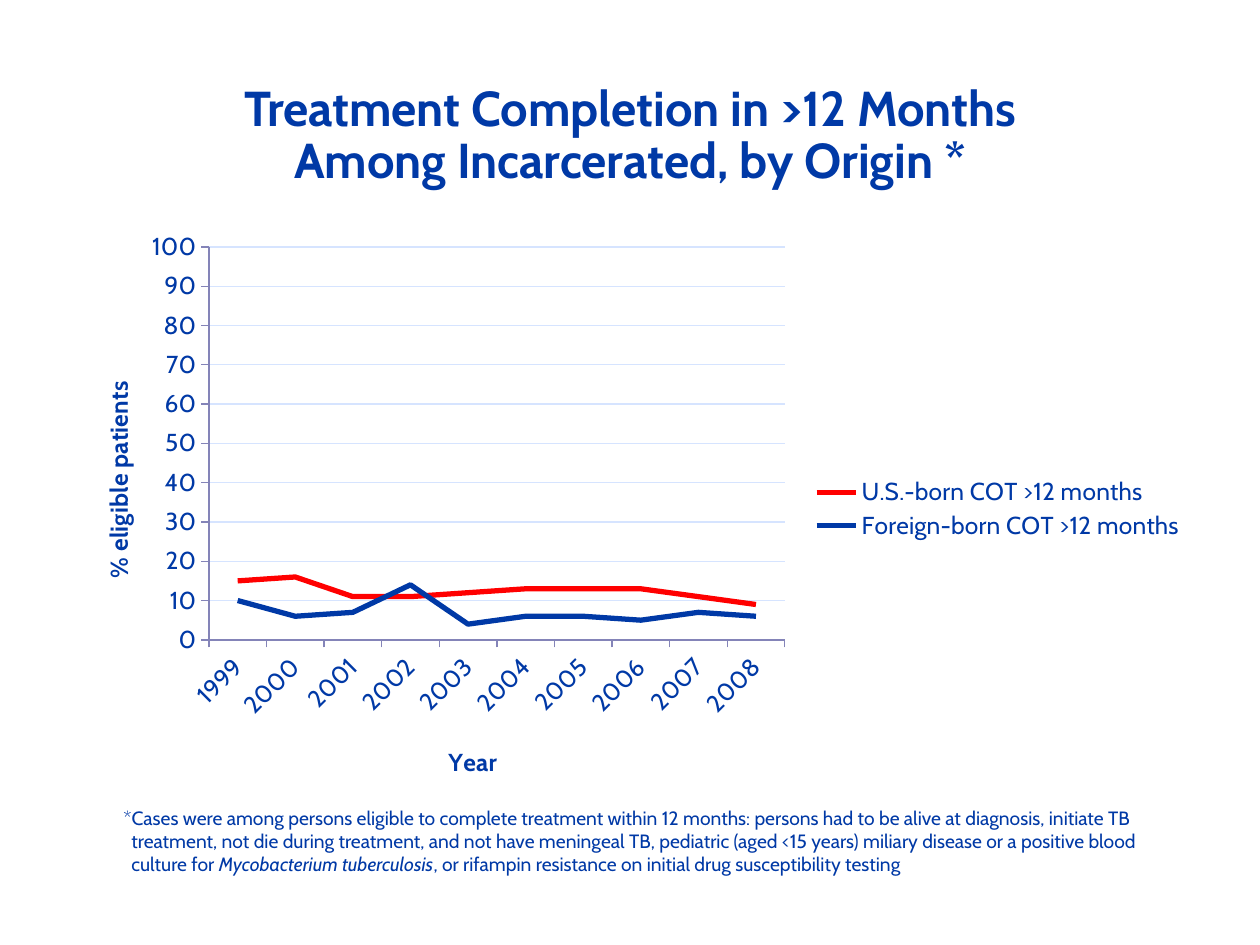
"""Build a slide with a line chart of late treatment completion by origin."""
from pptx import Presentation
from pptx import util as u
from pptx.chart.data import CategoryChartData
from pptx.dml.color import RGBColor
from pptx.enum import chart as ch, text
from pptx.oxml import parse_xml
from pptx.oxml.ns import nsdecls, qn

FONT, NAVY, RED, GRID, AXIS = "Cabin", "0039A6", "FF0000", "D6E4FF", "8484B8"
TITLE = "Treatment Completion in >12 Months\vAmong Incarcerated, by Origin *"
NOTE = [
    ("*Cases were among persons eligible to complete treatment within 12 months: "
     "persons had to be alive at diagnosis, initiate TB\v"
     "treatment, not die during treatment, and not have meningeal TB, pediatric "
     "(aged <15 years) miliary disease or a positive blood\vculture for ", False),
    ("Mycobacterium tuberculosis", True),
    (", or rifampin resistance on initial drug susceptibility testing", False),
]
YEARS = [str(year) for year in range(1999, 2009)]
SERIES = [
    ("U.S.-born COT >12 months", RED, (15, 16, 11, 11, 12, 13, 13, 13, 11, 9)),
    ("Foreign-born COT >12 months", NAVY, (10, 6, 7, 14, 4, 6, 6, 5, 7, 6)),
]
TITLE_BOX = (63, 38, 1134, 157)
CHART_BOX = (63, 220, 1134, 577)
NOTE_BOX = (63, 798, 1134, 84)
PLOT_BOX = (209, 247, 576, 393)
LEGEND_BOX = (812, 474, 372, 70)
YEAR_AT, PERCENT_AT = (444, 741), (97, 377)


def px(value):
    return u.Emu(round(value * 914400 / 126))


def color(value):
    return RGBColor.from_string(value)


def style(font, size, bold=False):
    font.name, font.size, font.bold = FONT, u.Pt(size), bold
    font.color.rgb = color(NAVY)


def add_box(page, place):
    box = page.shapes.add_textbox(*map(px, place))
    frame = box.text_frame
    frame.word_wrap = True
    frame.vertical_anchor = text.MSO_ANCHOR.BOTTOM
    return frame.paragraphs[0]


def set_line(line, value, width):
    line.color.rgb = color(value)
    line.width = u.Pt(width)


def place_part(part, place, after=None, inner=False):
    """Give a chart part a manual layout from slide pixels."""
    for old in part.findall(qn("c:layout")):
        part.remove(old)
    left, top, width, height = CHART_BOX
    shares = [(place[0] - left) / width, (place[1] - top) / height]
    shares += [size / whole for size, whole in zip(place[2:], (width, height))]
    tags = '<c:layoutTarget val="inner"/>' if inner else ""
    tags += '<c:xMode val="edge"/><c:yMode val="edge"/>'
    tags += "".join(f'<c:{name} val="{share:.4f}"/>' for name, share in zip("xywh", shares))
    layout = parse_xml(f'<c:layout {nsdecls("c")}><c:manualLayout>{tags}'
                       "</c:manualLayout></c:layout>")
    if after:
        part.find(qn(after)).addnext(layout)
    else:
        part.insert(0, layout)


def style_axis(axis, title, corner):
    para = axis.axis_title.text_frame.paragraphs[0]
    para.text = title
    style(para.font, 14, True)
    place_part(axis.axis_title._element, corner, "c:tx")
    style(axis.tick_labels.font, 14)
    axis.major_tick_mark = ch.XL_TICK_MARK.OUTSIDE
    axis.minor_tick_mark = ch.XL_TICK_MARK.NONE
    set_line(axis.format.line, AXIS, 0.75)


def add_line_chart(page):
    data = CategoryChartData(number_format="0")
    data.categories = YEARS
    for name, _, values in SERIES:
        data.add_series(name, values)
    chart = page.shapes.add_chart(ch.XL_CHART_TYPE.LINE, *map(px, CHART_BOX), data).chart
    style(chart.font, 10)
    chart.has_title = False
    for series, (_, value, _) in zip(chart.plots[0].series, SERIES):
        series.smooth = False
        series.marker.style = ch.XL_MARKER_STYLE.NONE
        set_line(series.format.line, value, 3)
    chart.plots[0].vary_by_categories = False

    years, percent = chart.category_axis, chart.value_axis
    style_axis(years, "Year", YEAR_AT)
    style_axis(percent, "% eligible patients", PERCENT_AT)
    years._element.find(qn("c:txPr")).find(qn("a:bodyPr")).set("rot", "-2700000")
    percent.minimum_scale, percent.maximum_scale, percent.major_unit = 0, 100, 10
    set_line(percent.major_gridlines.format.line, GRID, 0.75)

    chart.has_legend = True
    chart.legend.position = ch.XL_LEGEND_POSITION.RIGHT
    chart.legend.include_in_layout = False
    style(chart.legend.font, 14)
    place_part(chart.legend._element, LEGEND_BOX, "c:legendPos")
    place_part(chart._chartSpace.chart.plotArea, PLOT_BOX, inner=True)


def main():
    deck = Presentation()
    deck.slide_width, deck.slide_height = px(1260), px(945)
    page = deck.slides.add_slide(deck.slide_layouts[6])

    heading = add_box(page, TITLE_BOX)
    heading.text = TITLE
    heading.alignment = text.PP_ALIGN.CENTER
    heading.line_spacing = u.Pt(30)
    style(heading.font, 28, True)

    add_line_chart(page)

    note = add_box(page, NOTE_BOX)
    for part, italic in NOTE:
        for index, line in enumerate(part.split("\v")):
            if index:
                note.add_line_break()
            span = note.add_run()
            span.text = line
            span.font.italic = italic
            style(span.font, 11)
    margins = note._p.get_or_add_pPr()
    margins.set("marL", str(px(56)))
    margins.set("indent", str(px(-8)))

    deck.save("out.pptx")


if __name__ == "__main__":
    main()
